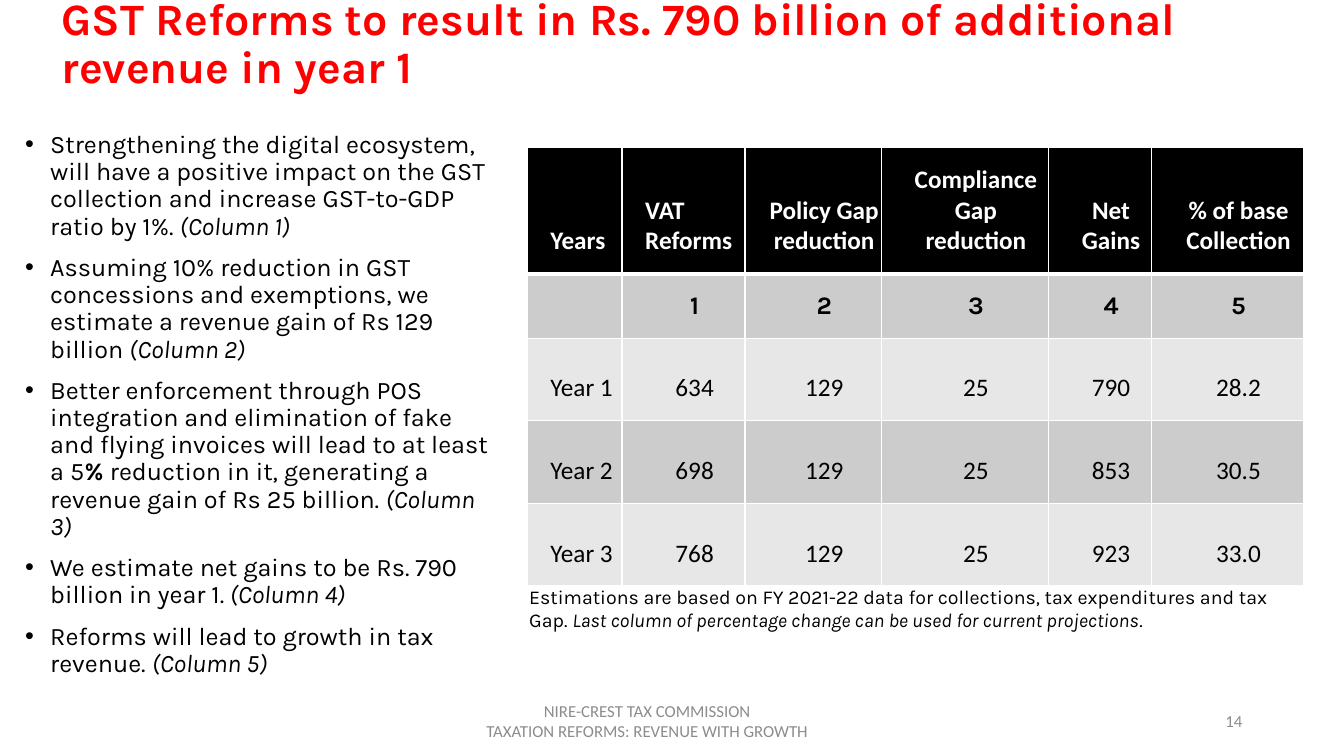
from dataclasses import dataclass

from pptx import Presentation
from pptx import util as u
from pptx.dml import color
from pptx.enum import text
from pptx.oxml import ns, xmlchemy

BLACK, WHITE, RED, GREY = "000000", "FFFFFF", "FF0000", "8C8C8C"
LEFT, CENTER, RIGHT = text.PP_ALIGN.LEFT, text.PP_ALIGN.CENTER, text.PP_ALIGN.RIGHT


@dataclass
class Style:
    size: float
    font: str = "Karla"
    color: str = BLACK
    bold: bool = False
    italic: bool = False


@dataclass
class Span:
    words: str
    bold: bool = False
    italic: bool = False


@dataclass
class Block:
    left: float
    top: float
    width: float
    height: float
    paragraphs: list
    style: Style
    align: int = LEFT
    anchor: int = text.MSO_ANCHOR.MIDDLE
    line: float = 1.0
    before: float = 0
    indent: float = 0
    bullet: bool = False


def rgb(value: str) -> color.RGBColor:
    return color.RGBColor.from_string(value)


def format_run(r, style: Style) -> None:
    r.font.size = u.Pt(style.size)
    r.font.name = style.font
    r.font.color.rgb = rgb(style.color)
    r.font.bold = style.bold
    r.font.italic = style.italic


def indent_paragraph(p, indent: float, bullet: bool) -> None:
    pPr = p._p.get_or_add_pPr()
    pPr.set("marL", str(u.Inches(indent)))
    pPr.set("indent", str(-u.Inches(indent) if bullet else 0))
    if bullet:
        xmlchemy.OxmlElement
        font = xmlchemy.OxmlElement("a:buFont")
        font.set("typeface", "Arial")
        mark = xmlchemy.OxmlElement("a:buChar")
        mark.set("char", "•")
        pPr.extend([font, mark])


def fill_block(sp, block: Block) -> None:
    sp.left, sp.top = u.Inches(block.left), u.Inches(block.top)
    sp.width, sp.height = u.Inches(block.width), u.Inches(block.height)
    tf = sp.text_frame
    tf.word_wrap = True
    tf.auto_size = text.MSO_AUTO_SIZE.NONE
    tf.vertical_anchor = block.anchor
    for i, spans in enumerate(block.paragraphs):
        p = tf.add_paragraph() if i else tf.paragraphs[0]
        p.alignment = block.align
        p.line_spacing = block.line
        p.space_before = u.Pt(block.before)
        if block.indent:
            indent_paragraph(p, block.indent, block.bullet)
        for span in spans:
            r = p.add_run()
            r.text = span.words
            s = block.style
            format_run(r, Style(s.size, s.font, s.color, s.bold or span.bold, span.italic))


def set_border(cell, side: str, width: float) -> None:
    ln = xmlchemy.OxmlElement(f"a:ln{side}")
    ln.set("w", str(u.Pt(width)))
    fill = xmlchemy.OxmlElement("a:solidFill")
    clr = xmlchemy.OxmlElement("a:srgbClr")
    clr.set("val", WHITE)
    fill.append(clr)
    ln.append(fill)
    tcPr = cell._tc.get_or_add_tcPr()
    tcPr.insert(len(tcPr.findall(ns.qn("a:lnL")) + tcPr.findall(ns.qn("a:lnR"))
                    + tcPr.findall(ns.qn("a:lnT"))), ln)


def format_cell(cell, words: str, fill: str, style: Style, align: int) -> None:
    cell.fill.solid()
    cell.fill.fore_color.rgb = rgb(fill)
    if not words:
        return
    cell.vertical_anchor = text.MSO_ANCHOR.BOTTOM
    cell.margin_left, cell.margin_right = u.Inches(0.23), u.Inches(0.01)
    cell.margin_top = cell.margin_bottom = u.Inches(0.17)
    cell.text = words
    p = cell.text_frame.paragraphs[0]
    p.alignment = align
    format_run(p.runs[0], style)


COLUMNS = [0.94, 1.22, 1.35, 1.66, 1.02, 1.51]
HEIGHTS = [1.23, 0.64, 0.82, 0.82, 0.82]
ROWS = [
    ["Years", "VAT Reforms", "Policy Gap reduction", "Compliance Gap reduction",
     "Net Gains", "% of base Collection"],
    ["", "1", "2", "3", "4", "5"],
    ["Year 1", "634", "129", "25", "790", "28.2"],
    ["Year 2", "698", "129", "25", "853", "30.5"],
    ["Year 3", "768", "129", "25", "923", "33.0"],
]
ROW_STYLES = [Style(18, "Calibri", WHITE, True), Style(18, bold=True)] + [Style(18, "Calibri")] * 3


def add_revenue_table(s) -> None:
    frame = s.shapes.add_table(len(ROWS), len(COLUMNS), u.Inches(5.23), u.Inches(1.46),
                               u.Inches(sum(COLUMNS)), u.Inches(sum(HEIGHTS)))
    table = frame.table
    table.first_row = table.horz_banding = False
    for column, width in zip(table.columns, COLUMNS):
        column.width = u.Inches(width)
    for i, (row, height) in enumerate(zip(table.rows, HEIGHTS)):
        row.height = u.Inches(height)
        fill = BLACK if i == 0 else ("E7E7E7", "CCCCCC")[i % 2]
        for j, cell in enumerate(row.cells):
            left = j == 0 or (i == 0 and j == 1)
            format_cell(cell, ROWS[i][j], fill, ROW_STYLES[i], LEFT if left else CENTER)
            for side in "LRTB":
                thick = (i, side) in ((0, "B"), (1, "T"))
                set_border(cell, side, 3 if thick else 1)


TITLE = Block(0.51, 0, 12.67, 0.89, [
    [Span("GST Reforms to result in Rs. 790 billion of additional revenue in year 1")],
], Style(32, color=RED, bold=True), line=0.9)

TEXTS = [
    Block(9.42, 6.95, 3, 0.4, [[Span("14")]], Style(12, "Calibri", GREY), RIGHT),
    Block(4.17, 6.95, 4.5, 0.4, [
        [Span("NIRE-CREST TAX COMMISSION")],
        [Span("TAXATION REFORMS: REVENUE WITH GROWTH")],
    ], Style(12, "Calibri", GREY), CENTER),
    Block(0.15, 0.89, 4.87, 6.25, [
        [Span("Strengthening the digital ecosystem, will have a positive impact on the GST "
              "collection and increase GST-to-GDP ratio by 1%. "),
         Span("(Column 1)", italic=True)],
        [Span("Assuming 10% reduction in GST concessions and exemptions, we estimate a "
              "revenue gain of Rs 129 billion "),
         Span("(Column 2)", italic=True)],
        [Span("Better enforcement through POS integration and elimination of fake and flying "
              "invoices will lead to at least a 5"),
         Span("% ", bold=True),
         Span("reduction in it, generating a revenue gain of Rs 25 billion. "),
         Span("(Column 3)", italic=True)],
        [Span("We estimate net gains to be Rs. 790 billion in year 1."),
         Span(" (Column 4)", italic=True)],
        [Span("Reforms will lead to growth in tax revenue. "),
         Span("(Column 5)", italic=True)],
    ], Style(18), line=0.9, before=10, indent=0.25, bullet=True),
    Block(4.9, 5.75, 8.03, 0.57, [
        [Span("Estimations are based on FY 2021-22 data for collections, tax expenditures "
              "and tax Gap. "),
         Span("Last column of percentage change can be used for current projections", italic=True),
         Span(".")],
    ], Style(14), anchor=text.MSO_ANCHOR.TOP, before=10, indent=0.25),
]


def main() -> None:
    prs = Presentation()
    prs.slide_width, prs.slide_height = u.Inches(13.33), u.Inches(7.5)
    s = prs.slides.add_slide(prs.slide_layouts[5])
    fill_block(s.shapes.title, TITLE)
    add_revenue_table(s)
    for block in TEXTS:
        fill_block(s.shapes.add_textbox(0, 0, 0, 0), block)
    prs.save("out.pptx")


if __name__ == "__main__":
    main()
